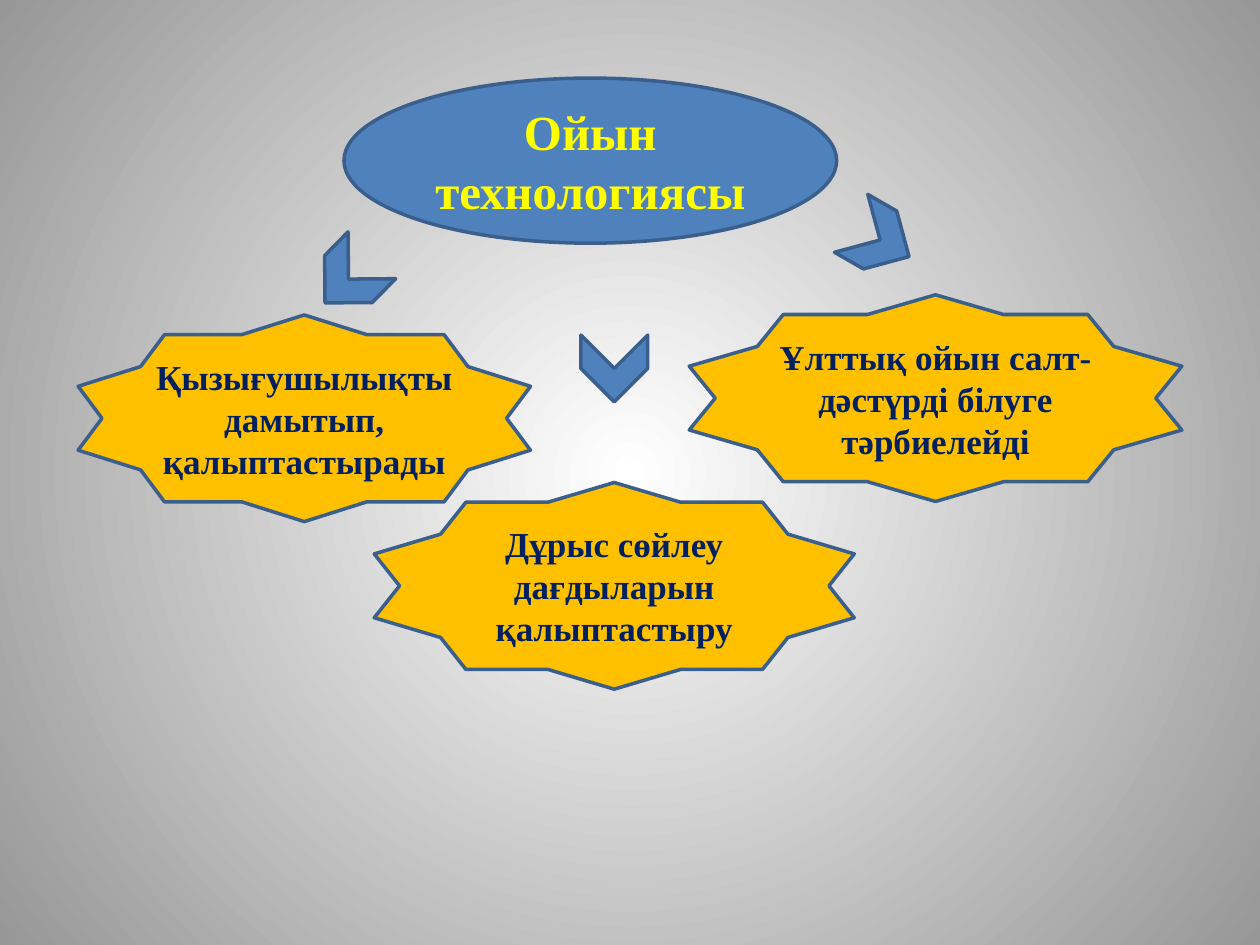
from dataclasses import dataclass

from lxml import etree
from pptx import Presentation
from pptx.dml.color import RGBColor
from pptx.enum.shapes import MSO_SHAPE
from pptx.enum.text import MSO_ANCHOR, PP_ALIGN
from pptx.oxml.ns import qn
from pptx.util import Inches, Pt

ELLIPSE = MSO_SHAPE.OVAL
CHEVRON = MSO_SHAPE.CHEVRON
STAR = MSO_SHAPE.STAR_10_POINT
CENTER = PP_ALIGN.CENTER
MIDDLE = MSO_ANCHOR.MIDDLE


@dataclass(frozen=True)
class Theme:
    font: str = "Times New Roman"
    blue: str = "4F81BD"
    outline: str = "3A5F8C"
    gold: str = "FFC000"
    yellow: str = "FFFF00"
    navy: str = "002060"
    glow: str = "FFFFFF"
    edge: str = "979797"
    title_size: int = 28
    body_size: int = 20
    line_width: int = 2


THEME = Theme()
STAR_HEIGHT = 1.64
CHEVRON_SIZE = 0.53

GOALS = [
    (0.62, 2.5, 3.59, ["Қызығушылықты дамытып,", "қалыптастырады"]),
    (2.97, 3.83, 3.81, ["Дұрыс сөйлеу дағдыларын қалыптастыру"]),
    (5.47, 2.34, 3.91, ["Ұлттық ойын салт-дәстүрді білуге тәрбиелейді"]),
]
POINTERS = [(6.72, 1.64, 29.9), (2.5, 1.95, 134.5), (4.61, 2.66, 90)]


def rgb(value):
    return RGBColor.from_string(value)


def set_background(slide):
    fill = slide.background.fill
    fill.gradient()
    for stop, color, position in zip(fill.gradient_stops, (THEME.glow, THEME.edge), (0, 1)):
        stop.color.rgb = rgb(color)
        stop.position = position
    lin = next(slide.background._cSld.iter(qn("a:lin")))
    radial = etree.Element(qn("a:path"), {"path": "circle"})
    etree.SubElement(radial, qn("a:fillToRect"), dict.fromkeys("ltrb", "50000"))
    lin.getparent().replace(lin, radial)


def add_figure(slide, kind, box, color):
    sp = slide.shapes.add_shape(kind, *map(Inches, box))
    sp.shadow.inherit = False
    sp.fill.solid()
    sp.fill.fore_color.rgb = rgb(color)
    sp.line.color.rgb = rgb(THEME.outline)
    sp.line.width = Pt(THEME.line_width)
    return sp


def write(sp, lines, size, color):
    tf = sp.text_frame
    tf.word_wrap = True
    tf.vertical_anchor = MIDDLE
    tf.text = "\n".join(lines)
    for p in tf.paragraphs:
        p.alignment = CENTER
        p.font.name = THEME.font
        p.font.size = Pt(size)
        p.font.bold = True
        p.font.color.rgb = rgb(color)


def add_topic(slide, box, text):
    sp = add_figure(slide, ELLIPSE, box, THEME.blue)
    write(sp, [text], THEME.title_size, THEME.yellow)


def add_pointer(slide, left, top, angle):
    sp = add_figure(slide, CHEVRON, (left, top, CHEVRON_SIZE, CHEVRON_SIZE), THEME.blue)
    sp.rotation = angle


def add_goal(slide, left, top, width, lines):
    sp = add_figure(slide, STAR, (left, top, width, STAR_HEIGHT), THEME.gold)
    write(sp, lines, THEME.body_size, THEME.navy)


def main():
    prs = Presentation()
    prs.slide_width, prs.slide_height = Inches(10), Inches(7.5)
    slide = prs.slides.add_slide(prs.slide_layouts.get_by_name("Blank"))
    set_background(slide)
    add_topic(slide, (2.73, 0.62, 3.91, 1.31), "Ойын технологиясы")
    for pointer in POINTERS:
        add_pointer(slide, *pointer)
    for goal in GOALS:
        add_goal(slide, *goal)
    prs.save("out.pptx")


if __name__ == "__main__":
    main()
